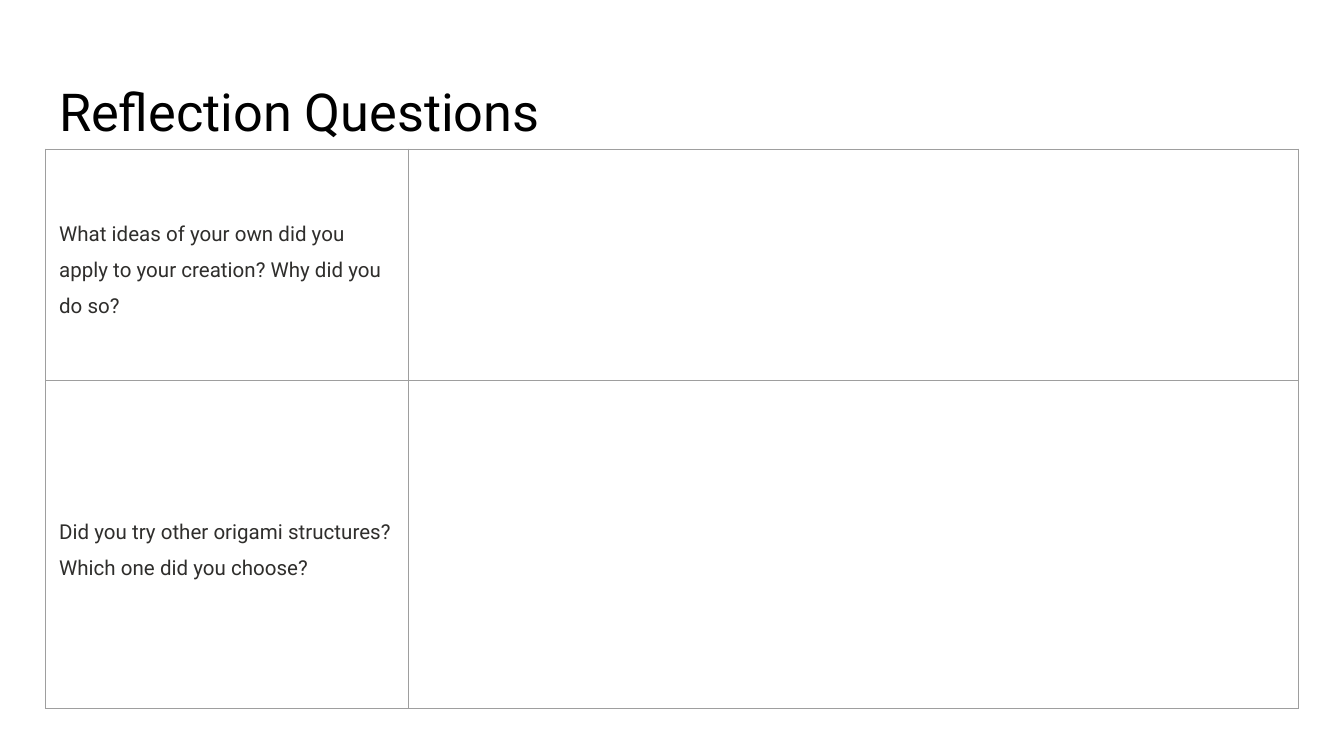
import pptx
import pptx.dml.color
import pptx.enum.text
import pptx.oxml
import pptx.oxml.ns
import pptx.util
from lxml import etree

TITLE = "Reflection Questions"
QUESTIONS = [
    "What ideas of your own did you apply to your creation? Why did you do so?",
    "Did you try other origami structures? Which one did you choose?",
]
SLIDE_WIDTH = 10
SLIDE_HEIGHT = SLIDE_WIDTH * 9 / 16
LEFT, TITLE_TOP, TABLE_TOP = 0.34, 0.49, 1.11
CONTENT_WIDTH = SLIDE_WIDTH - 2 * LEFT
TITLE_HEIGHT = 0.63
COLUMN_WIDTHS = [2.7, CONTENT_WIDTH - 2.7]
ROW_HEIGHTS = [1.72, 2.44]
TITLE_FORMAT = {"name": "Roboto", "size": pptx.util.Pt(28), "bold": False}
QUESTION_FORMAT = {"name": "Roboto", "size": pptx.util.Pt(11), "bold": False}
MARGINS = {
    f"margin_{side}": pptx.util.Inches(0.1)
    for side in ("left", "top", "right", "bottom")
}
BORDER_COLOR, BORDER_WIDTH = "9E9E9E", pptx.util.Pt(0.75)


def set_attributes(target, values):
    for name, value in values.items():
        setattr(target, name, value)


def rgb(color):
    return pptx.dml.color.RGBColor.from_string(color)


def write(paragraph, text, font_format, color):
    run = paragraph.add_run()
    run.text = text
    set_attributes(run.font, font_format)
    run.font.color.rgb = rgb(color)
    paragraph.alignment = pptx.enum.text.PP_ALIGN.LEFT


def add_borders(cell):
    """Insert the four edge lines ahead of the cell's fill, as the schema requires."""
    properties = cell._tc.get_or_add_tcPr()
    for position, edge in enumerate(("lnL", "lnR", "lnT", "lnB")):
        line = etree.Element(pptx.oxml.ns.qn(f"a:{edge}"), w=str(BORDER_WIDTH))
        fill = etree.SubElement(line, pptx.oxml.ns.qn("a:solidFill"))
        etree.SubElement(fill, pptx.oxml.ns.qn("a:srgbClr"), val=BORDER_COLOR)
        properties.insert(position, line)


def add_title(slide):
    title = slide.shapes.title
    set_attributes(title, {
        "left": pptx.util.Inches(LEFT),
        "top": pptx.util.Inches(TITLE_TOP),
        "width": pptx.util.Inches(CONTENT_WIDTH),
        "height": pptx.util.Inches(TITLE_HEIGHT),
    })
    set_attributes(title.text_frame, {
        **MARGINS,
        "word_wrap": True,
        "auto_size": pptx.enum.text.MSO_AUTO_SIZE.NONE,
        "vertical_anchor": pptx.enum.text.MSO_ANCHOR.TOP,
    })
    write(title.text_frame.paragraphs[0], TITLE, TITLE_FORMAT, "000000")


def add_question_table(slide):
    frame = slide.shapes.add_table(
        len(ROW_HEIGHTS), len(COLUMN_WIDTHS),
        pptx.util.Inches(LEFT), pptx.util.Inches(TABLE_TOP),
        pptx.util.Inches(CONTENT_WIDTH), pptx.util.Inches(sum(ROW_HEIGHTS)),
    )
    table = frame.table
    set_attributes(table, {"first_row": False, "horz_banding": False})
    for column, width in zip(table.columns, COLUMN_WIDTHS):
        column.width = pptx.util.Inches(width)
    for row, height in zip(table.rows, ROW_HEIGHTS):
        row.height = pptx.util.Inches(height)
    for cell in table.iter_cells():
        set_attributes(cell, MARGINS)
        cell.vertical_anchor = pptx.enum.text.MSO_ANCHOR.MIDDLE
        cell.fill.background()
        add_borders(cell)
    for row_index, question in enumerate(QUESTIONS):
        paragraph = table.cell(row_index, 0).text_frame.paragraphs[0]
        paragraph.line_spacing = 1.5
        write(paragraph, question, QUESTION_FORMAT, "2F2E2C")


def main():
    presentation = pptx.Presentation()
    presentation.slide_width = pptx.util.Inches(SLIDE_WIDTH)
    presentation.slide_height = pptx.util.Inches(SLIDE_HEIGHT)
    slide = presentation.slides.add_slide(presentation.slide_layouts[5])
    slide.background.fill.solid()
    slide.background.fill.fore_color.rgb = rgb("FFFFFF")
    add_title(slide)
    add_question_table(slide)
    presentation.save("out.pptx")


if __name__ == "__main__":
    main()
